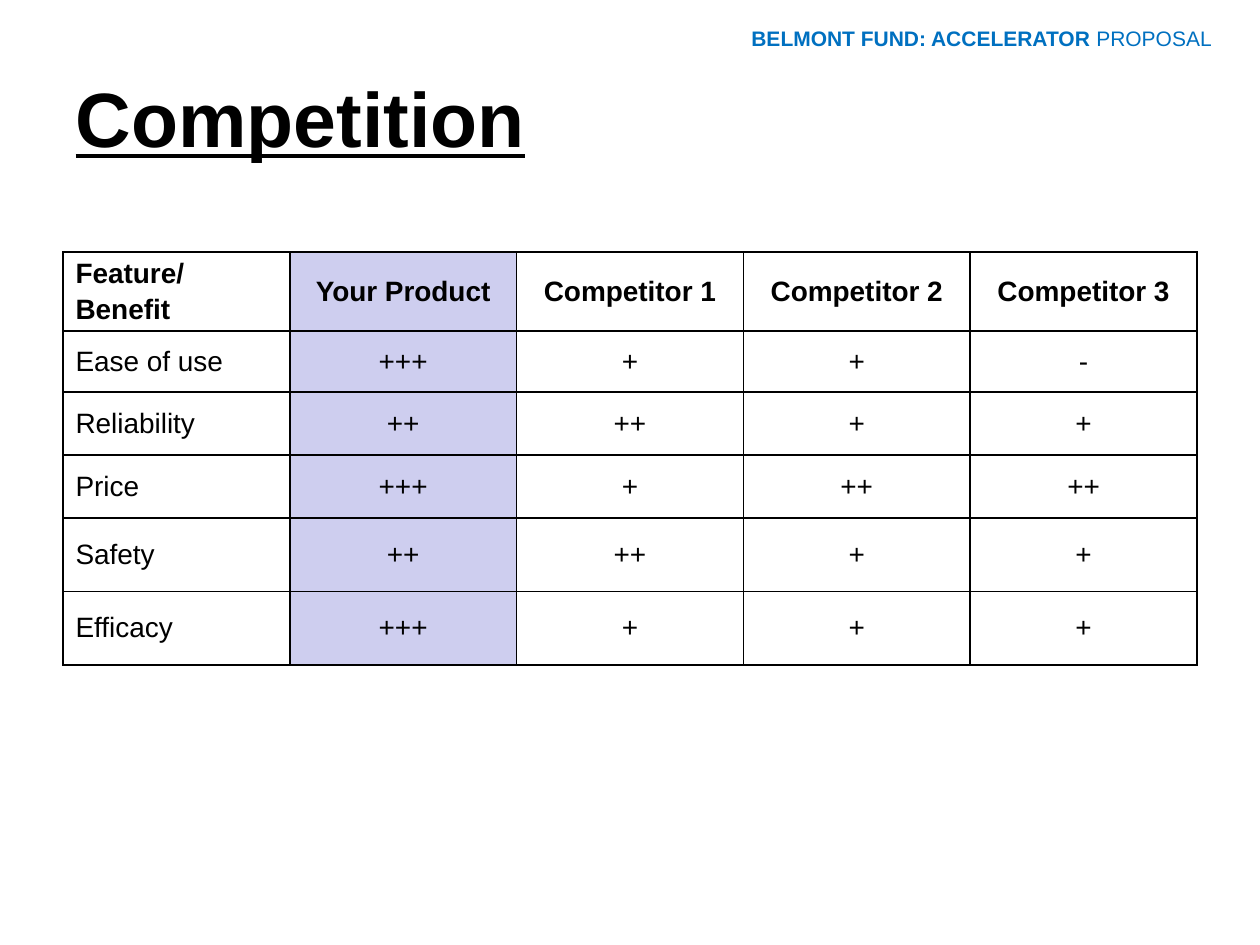
"""Build the Competition slide with a feature comparison table."""
from lxml import etree
from pptx import Presentation
from pptx import util as u
from pptx.dml.color import RGBColor
from pptx.enum import text
from pptx.oxml.ns import qn

Pt = u.Pt
COLORS = {"text": "000000", "line": "000000", "product": "CECEEF", "banner": "0070C0"}
ROWS = [
    ("Feature/\nBenefit", "Your Product", "Competitor 1", "Competitor 2", "Competitor 3"),
    ("Ease of use", "+++", "+", "+", "-"),
    ("Reliability", "++", "++", "+", "+"),
    ("Price", "+++", "+", "++", "++"),
    ("Safety", "++", "++", "+", "+"),
    ("Efficacy", "+++", "+", "+", "+"),
]
HEIGHTS = [36, 34.8, 36, 36, 42, 42]


def style(font, size, color, bold):
    font.name, font.size, font.bold = "Arial", Pt(size), bold
    font.color.rgb = RGBColor.from_string(COLORS[color])


def add_borders(cell):
    tc_pr = cell._tc.get_or_add_tcPr()
    for side in ("lnL", "lnR", "lnT", "lnB"):
        ln = etree.SubElement(tc_pr, qn("a:" + side), w=str(Pt(1)))
        fill = etree.SubElement(ln, qn("a:solidFill"))
        etree.SubElement(fill, qn("a:srgbClr"), val=COLORS["line"])


prs = Presentation()
prs.slide_width, prs.slide_height = Pt(720), Pt(540)
s = prs.slides.add_slide(prs.slide_layouts[5])

title = s.shapes.title
title.left, title.top, title.width, title.height = Pt(36), Pt(21.6), Pt(648), Pt(90)
tf = title.text_frame
tf.text = "Competition"
tf.vertical_anchor = text.MSO_ANCHOR.MIDDLE
p = tf.paragraphs[0]
p.alignment = text.PP_ALIGN.LEFT
style(p.font, 44, "text", True)
p.font.underline = True

table = s.shapes.add_table(len(ROWS), 5, Pt(36), Pt(144), Pt(648), Pt(sum(HEIGHTS))).table
table.first_row = table.horz_banding = False
for i, (row, height) in enumerate(zip(ROWS, HEIGHTS)):
    table.rows[i].height = Pt(height)
    for j, value in enumerate(row):
        cell = table.cell(i, j)
        cell.text = value
        cell.vertical_anchor = text.MSO_ANCHOR.MIDDLE
        add_borders(cell)
        if j == 1:
            cell.fill.solid()
            cell.fill.fore_color.rgb = RGBColor.from_string(COLORS["product"])
        else:
            cell.fill.background()
        for p in cell.text_frame.paragraphs:
            p.alignment = text.PP_ALIGN.CENTER if j else text.PP_ALIGN.LEFT
            p.space_before = Pt(2.5)
            style(p.font, 16, "text", i == 0)

banner = s.shapes.add_textbox(Pt(401.8), Pt(10.8), Pt(318.2), Pt(21.6))
tf = banner.text_frame
tf.word_wrap = True
p = tf.paragraphs[0]
p.alignment = text.PP_ALIGN.CENTER
for words, bold in (("BELMONT FUND: ACCELERATOR ", True), ("PROPOSAL", False)):
    r = p.add_run()
    r.text = words
    style(r.font, 12, "banner", bold)

prs.save("out.pptx")
